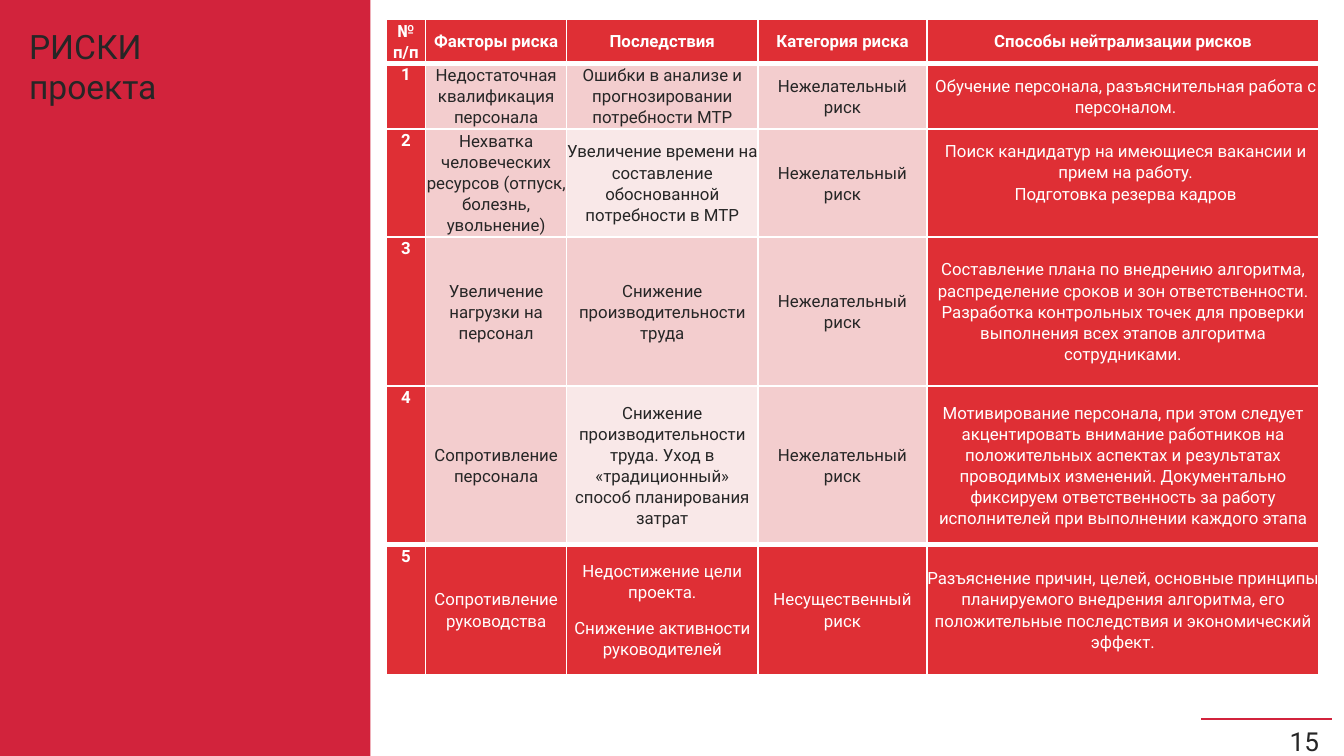
import pptx
import pptx.util
import pptx.dml.color
import pptx.enum.shapes
import pptx.enum.text
import pptx.oxml.ns
from lxml import etree

Cm = pptx.util.Cm
Pt = pptx.util.Pt
ALIGN = pptx.enum.text.PP_ALIGN
ANCHOR = pptx.enum.text.MSO_ANCHOR
qn = pptx.oxml.ns.qn

FONT = "Roboto"
COLORS = {
    "panel": "D2233C",
    "strong": "DF2F35",
    "soft": "F3CDCE",
    "pale": "F9E8E8",
    "dark": "262626",
    "white": "FFFFFF",
}

COLUMN_WIDTHS = [0.74, 2.67, 3.61, 3.2, 7.4]
ROW_HEIGHTS = [0.84, 1.24, 1.9, 2.82, 3, 2.46]
HEADINGS = ["№ п/п", "Факторы риска", "Последствия", "Категория риска",
            "Способы нейтрализации рисков"]
RISKS = [
    ["Недостаточная квалификация персонала",
     "Ошибки в анализе и прогнозировании потребности МТР",
     "Нежелательный риск",
     "Обучение персонала, разъяснительная работа с персоналом."],
    ["Нехватка человеческих ресурсов (отпуск, болезнь, увольнение)",
     "Увеличение времени на составление обоснованной потребности в МТР",
     "Нежелательный риск",
     "Поиск кандидатур на имеющиеся вакансии и прием на работу.\n"
     "Подготовка резерва кадров"],
    ["Увеличение нагрузки на персонал",
     "Снижение производительности труда",
     "Нежелательный риск",
     "Составление плана по внедрению алгоритма, распределение сроков "
     "и зон ответственности.\n"
     "Разработка контрольных точек для проверки выполнения всех этапов "
     "алгоритма сотрудниками."],
    ["Сопротивление персонала",
     "Снижение производительности труда. Уход в «традиционный» способ "
     "планирования затрат",
     "Нежелательный риск",
     "Мотивирование персонала, при этом следует акцентировать внимание "
     "работников на положительных аспектах и результатах проводимых "
     "изменений. Документально фиксируем ответственность за работу "
     "исполнителей при выполнении каждого этапа"],
    ["Сопротивление руководства",
     "Недостижение цели проекта.\nСнижение активности руководителей",
     "Несущественный риск",
     "Разъяснение причин, целей, основные принципы планируемого внедрения "
     "алгоритма, его положительные последствия и экономический эффект."],
]
LAST_ROW = len(RISKS)
LAST_COLUMN = len(HEADINGS) - 1


def rgb(name):
    return pptx.dml.color.RGBColor.from_string(COLORS[name])


def add_run(paragraph, text, size, color, bold=False):
    run = paragraph.add_run()
    run.text = text
    run.font.name = FONT
    run.font.size = Pt(size)
    run.font.bold = bold
    run.font.color.rgb = rgb(color)


def add_label(slide, left, top, width, height, text, size, align):
    label = slide.shapes.add_textbox(Cm(left), Cm(top), Cm(width), Cm(height))
    frame = label.text_frame
    frame.word_wrap = True
    frame.paragraphs[0].alignment = align
    add_run(frame.paragraphs[0], text, size, "dark")


def add_panel(slide, width, height):
    panel = slide.shapes.add_shape(
        pptx.enum.shapes.MSO_SHAPE.RECTANGLE, 0, 0, width, height)
    panel.shadow.inherit = False
    panel.fill.solid()
    panel.fill.fore_color.rgb = rgb("panel")
    panel.line.fill.background()


def add_footer_rule(slide):
    rule = slide.shapes.add_connector(
        pptx.enum.shapes.MSO_CONNECTOR.STRAIGHT,
        Cm(22.7), Cm(13.59), Cm(25.17), Cm(13.59))
    rule.line.color.rgb = rgb("panel")
    rule.line.width = Pt(1.5)
    etree.SubElement(rule._element.spPr, qn("a:effectLst"))


def set_borders(cell, top, bottom):
    properties = cell._tc.get_or_add_tcPr()
    for side, width in (("L", 1), ("R", 1), ("T", top), ("B", bottom)):
        border = etree.SubElement(properties, qn("a:ln" + side), w=str(Pt(width)))
        fill = etree.SubElement(border, qn("a:solidFill"))
        etree.SubElement(fill, qn("a:srgbClr"), val=COLORS["white"])


def cell_fill(row, column):
    if row in (0, LAST_ROW) or column in (0, LAST_COLUMN):
        return "strong"
    return "pale" if column == 2 and row % 2 == 0 else "soft"


def fill_cell(cell, row, column, text):
    set_borders(cell, 3 if row in (1, LAST_ROW) else 1,
                3 if row in (0, LAST_ROW - 1) else 1)
    background = cell_fill(row, column)
    cell.fill.solid()
    cell.fill.fore_color.rgb = rgb(background)
    cell.margin_left = cell.margin_right = cell.margin_top = cell.margin_bottom = 0
    is_number = row > 0 and column == 0
    cell.vertical_anchor = ANCHOR.TOP if is_number else ANCHOR.MIDDLE
    is_remedy = row > 0 and column == LAST_COLUMN
    if is_remedy and row <= 2:
        cell.margin_left = Cm(0.1)
        cell.margin_bottom = Cm(0.4 * (row - 1))
    for index, line in enumerate(text.split("\n")):
        frame = cell.text_frame
        paragraph = frame.add_paragraph() if index else frame.paragraphs[0]
        paragraph.alignment = ALIGN.CENTER
        paragraph.line_spacing = 1.07
        paragraph.space_after = Pt(0 if is_remedy else 8)
        add_run(paragraph, line, 9, "white" if background == "strong" else "dark",
                bold=row == 0 or column == 0)


def add_risk_table(slide):
    rows = [HEADINGS] + [[str(number), *risk] for number, risk in enumerate(RISKS, 1)]
    risks = slide.shapes.add_table(
        len(rows), len(HEADINGS), Cm(7.3), Cm(0.36),
        Cm(sum(COLUMN_WIDTHS)), Cm(sum(ROW_HEIGHTS))).table
    risks.first_row = False
    risks.horz_banding = False
    for column, width in zip(risks.columns, COLUMN_WIDTHS):
        column.width = Cm(width)
    for row, height in zip(risks.rows, ROW_HEIGHTS):
        row.height = Cm(height)
    for row, texts in enumerate(rows):
        for column, text in enumerate(texts):
            fill_cell(risks.cell(row, column), row, column, text)


def main():
    deck = pptx.Presentation()
    deck.slide_width = Cm(25.4)
    deck.slide_height = Cm(14.29)
    slide = deck.slides.add_slide(deck.slide_layouts[6])
    add_footer_rule(slide)
    add_label(slide, 22.7, 13.59, 2.48, 0.58, "15", 14, ALIGN.RIGHT)
    add_panel(slide, Cm(7), deck.slide_height)
    add_label(slide, 0.3, 0.36, 5, 1.02, "РИСКИ проекта", 18, ALIGN.LEFT)
    add_risk_table(slide)
    deck.save("out.pptx")


if __name__ == "__main__":
    main()
